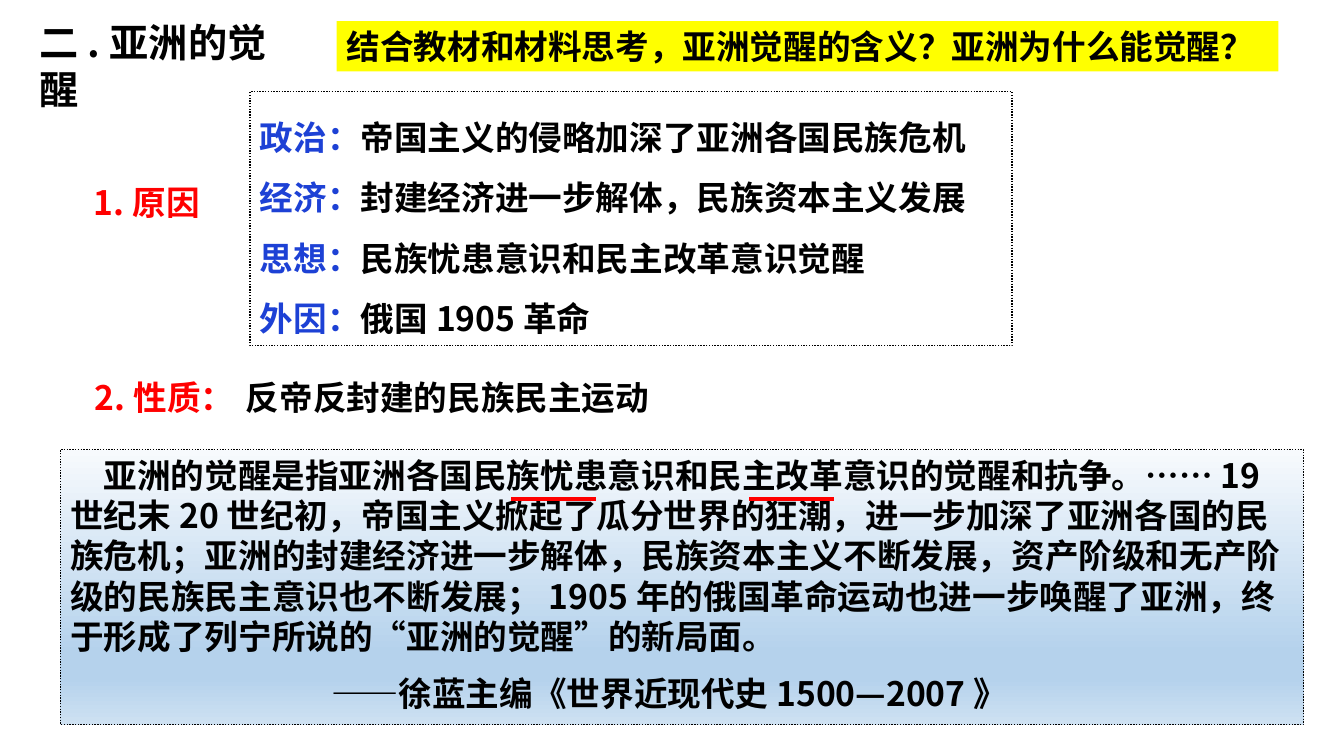
from dataclasses import dataclass

from lxml import etree
from pptx import Presentation
from pptx.dml.color import RGBColor
from pptx.enum.dml import MSO_LINE
from pptx.enum.shapes import MSO_CONNECTOR, MSO_SHAPE
from pptx.enum.text import MSO_ANCHOR, MSO_AUTO_SIZE, PP_ALIGN
from pptx.oxml.ns import qn
from pptx.util import Inches, Pt

RECTANGLE = MSO_SHAPE.RECTANGLE
STRAIGHT = MSO_CONNECTOR.STRAIGHT
DOTTED = MSO_LINE.ROUND_DOT
TOP = MSO_ANCHOR.TOP
GROW = MSO_AUTO_SIZE.SHAPE_TO_FIT_TEXT
LEFT = PP_ALIGN.LEFT


@dataclass(frozen=True)
class Theme:
    font: str = "Noto Sans CJK SC"
    title_size: int = 28
    body_size: int = 24
    ink: str = "000000"
    heading: str = "FF0000"
    label: str = "1D41D5"
    highlight: str = "FFFF00"
    quote_stops: tuple = ((0, "F7FAFD"), (74, "B5D2EC"), (83, "B5D2EC"), (100, "CEE1F2"))


THEME = Theme()

# text, (left, top, width, height), size, colour
LABELS = [
    ("反帝反封建的民族民主运动", (2.34, 3.69, 4.51, 0.5), THEME.body_size, THEME.ink),
    ("二.亚洲的觉醒", (0.29, 0.13, 2.74, 0.57), THEME.title_size, THEME.ink),
    ("1.原因", (0.83, 1.76, 1.65, 0.5), THEME.body_size, THEME.heading),
    ("2.性质：", (0.84, 3.69, 1.46, 0.5), THEME.body_size, THEME.heading),
]
QUESTION = "结合教材和材料思考，亚洲觉醒的含义？亚洲为什么能觉醒？"
QUESTION_AREA = (3.34, 0.21, 9.34, 0.5)
REASONS = [
    ("政治：", "帝国主义的侵略加深了亚洲各国民族危机"),
    ("经济：", "封建经济进一步解体，民族资本主义发展"),
    ("思想：", "民族忧患意识和民主改革意识觉醒"),
    ("外因：", "俄国1905革命"),
]
REASONS_AREA = (2.48, 0.91, 7.56, 2.52)
# text, first-line indent
QUOTE = [
    ("亚洲的觉醒是指亚洲各国民族忧患意识和民主改革意识的觉醒和抗争。……19世纪末20世纪初，"
     "帝国主义掀起了瓜分世界的狂潮，进一步加深了亚洲各国的民族危机；亚洲的封建经济进一步解体，"
     "民族资本主义不断发展，资产阶级和无产阶级的民族民主意识也不断发展；"
     "1905年的俄国革命运动也进一步唤醒了亚洲，终于形成了列宁所说的“亚洲的觉醒”的新局面。", 0.33),
    ("——徐蓝主编《世界近现代史1500—2007》", 2.59),
]
QUOTE_AREA = (0.6, 4.46, 12.33, 2.73)
UNDERLINE_STARTS = (5.07, 7.43)
UNDERLINE_WIDTH = 0.84
UNDERLINE_TOP = 4.95


def add_span(para, text, color=THEME.ink, size=THEME.body_size):
    span = para.add_run()
    span.text = text
    span.font.size = Pt(size)
    span.font.bold = True
    span.font.name = THEME.font
    span.font.color.rgb = RGBColor.from_string(color)
    properties = span.font._element
    etree.SubElement(properties, qn("a:ea"), typeface=THEME.font)


def prepare_text(box):
    frame = box.text_frame
    frame.word_wrap = True
    frame.auto_size = GROW
    frame.vertical_anchor = TOP
    return frame


def add_paragraphs(frame, count):
    paras = [frame.paragraphs[0]] + [frame.add_paragraph() for _ in range(count - 1)]
    for para in paras:
        para.alignment = LEFT
    return paras


def add_panel(page, area, dotted):
    panel = page.shapes.add_shape(RECTANGLE, *map(Inches, area))
    panel.shadow.inherit = False
    panel.fill.background()
    if dotted:
        panel.line.color.rgb = RGBColor.from_string(THEME.ink)
        panel.line.width = Pt(1)
        panel.line.dash_style = DOTTED
    else:
        panel.line.fill.background()
    return panel


def add_reasons(page):
    frame = prepare_text(add_panel(page, REASONS_AREA, dotted=True))
    for para, (label, reason) in zip(add_paragraphs(frame, len(REASONS)), REASONS):
        para.line_spacing = 1.5
        add_span(para, label, THEME.label)
        add_span(para, reason)


def add_label(page, text, area, size, color):
    box = page.shapes.add_textbox(*map(Inches, area))
    add_span(prepare_text(box).paragraphs[0], text, color, size)


def add_question(page):
    panel = add_panel(page, QUESTION_AREA, dotted=False)
    panel.fill.solid()
    panel.fill.fore_color.rgb = RGBColor.from_string(THEME.highlight)
    para, = add_paragraphs(prepare_text(panel), 1)
    add_span(para, QUESTION)


def fill_downward(panel, stops):
    """Fill the panel from top to bottom with (percent, colour) stops."""
    panel.fill.gradient()
    panel.fill.gradient_angle = 270
    stop_list = panel._element.spPr.find(qn("a:gradFill")).find(qn("a:gsLst"))
    for old_stop in list(stop_list):
        stop_list.remove(old_stop)
    for percent, color in stops:
        stop = etree.SubElement(stop_list, qn("a:gs"), pos=str(percent * 1000))
        etree.SubElement(stop, qn("a:srgbClr"), val=color)


def add_quote(page):
    panel = add_panel(page, QUOTE_AREA, dotted=True)
    fill_downward(panel, THEME.quote_stops)
    frame = prepare_text(panel)
    for para, (text, indent) in zip(add_paragraphs(frame, len(QUOTE)), QUOTE):
        para.space_before = para.space_after = Pt(6)
        properties = para._p.get_or_add_pPr()
        properties.set("marL", "0")
        properties.set("indent", str(Inches(indent)))
        add_span(para, text)


def add_underline(page, start):
    line = page.shapes.add_connector(
        STRAIGHT, Inches(start), Inches(UNDERLINE_TOP),
        Inches(start + UNDERLINE_WIDTH), Inches(UNDERLINE_TOP))
    line.line.color.rgb = RGBColor.from_string(THEME.heading)
    line.line.width = Pt(3)
    etree.SubElement(line._element.spPr, qn("a:effectLst"))


def main():
    deck = Presentation()
    deck.slide_width, deck.slide_height = Inches(13.33), Inches(7.5)
    page = deck.slides.add_slide(deck.slide_layouts[6])
    add_reasons(page)
    for label in LABELS:
        add_label(page, *label)
    add_question(page)
    add_quote(page)
    for start in UNDERLINE_STARTS:
        add_underline(page, start)
    deck.save("out.pptx")


if __name__ == "__main__":
    main()
